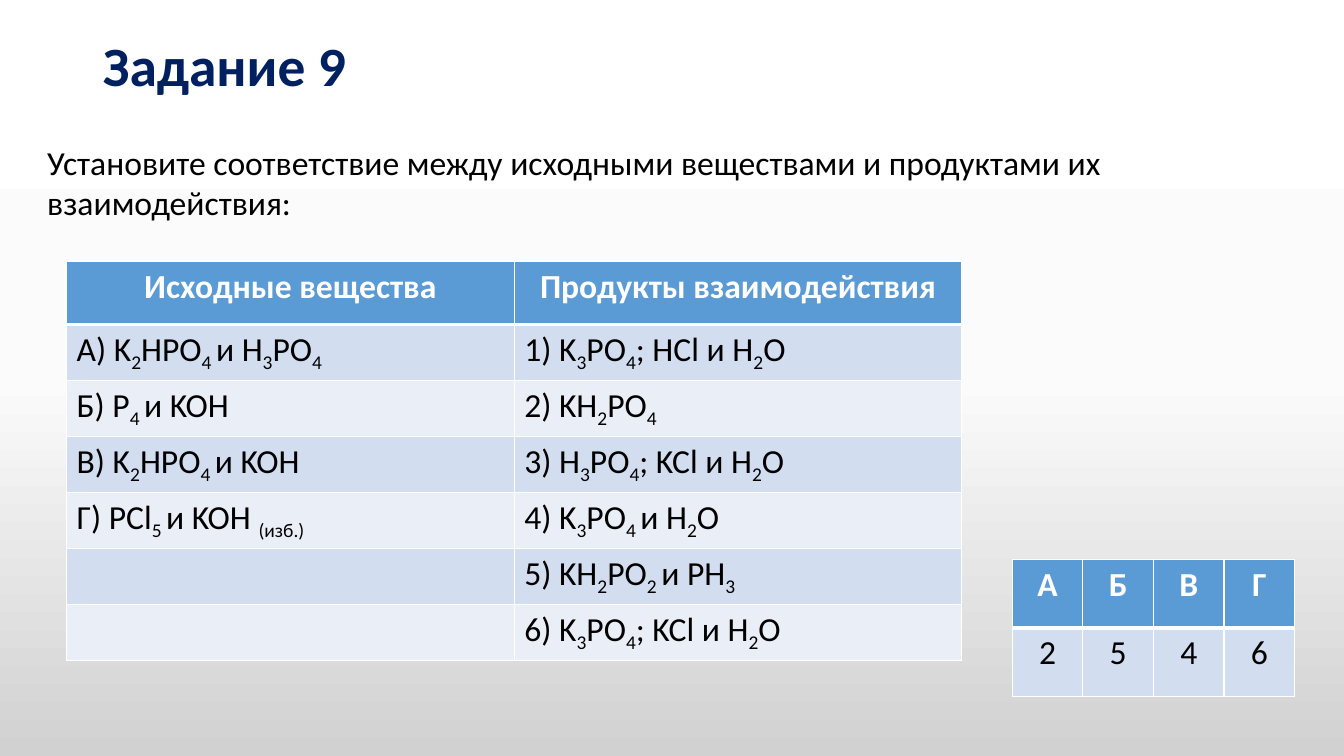
"""Builds a chemistry task slide with a matching table and an answer key."""
from copy import deepcopy

from lxml.etree import SubElement
from pptx import Presentation
from pptx.dml.color import RGBColor
from pptx.enum.text import MSO_ANCHOR, PP_ALIGN
from pptx.oxml import parse_xml
from pptx.oxml.ns import nsdecls, qn
from pptx.util import Inches, Pt

HEADER, BANDS = "5B9BD5", ("EAEFF7", "D2DEEF")


def style(font, size, color, bold=False):
    font.name, font.size, font.bold = "Calibri", Pt(size), bold
    font.color.rgb = RGBColor.from_string(color)


def add_grid(s, rows, left, top, col_width, heights, centered=False):
    cols = len(rows[0])
    table = s.shapes.add_table(len(rows), cols, Inches(left), Inches(top),
                               Inches(col_width * cols), Inches(sum(heights))).table
    for col in table.columns:
        col.width = Inches(col_width)
    for i, (texts, height) in enumerate(zip(rows, heights)):
        table.rows[i].height = Inches(height)
        for j, text in enumerate(texts):
            cell = table.cell(i, j)
            cell.fill.solid()
            cell.fill.fore_color.rgb = RGBColor.from_string(BANDS[i % 2] if i else HEADER)
            p = cell.text_frame.paragraphs[0]
            p.alignment = PP_ALIGN.CENTER if centered or i == 0 else PP_ALIGN.LEFT
            style(p.font, 24, "000000" if i else "FFFFFF", i == 0)
            for k, part in enumerate(text.split("|") if text else []):
                r = p.add_run()
                r.text = part
                if k % 2:
                    r._r.get_or_add_rPr().set("baseline", "-25000")
            widths = {"L": 1, "R": 1, "T": 3 if i == 1 else 1, "B": 1 if i else 3}
            for n, (side, width) in enumerate(widths.items()):
                ln = parse_xml(f'<a:ln{side} {nsdecls("a")} w="{Pt(width)}"/>')
                fill = SubElement(ln, qn("a:solidFill"))
                SubElement(fill, qn("a:srgbClr"), val="FFFFFF")
                cell._tc.get_or_add_tcPr().insert(n, ln)


prs = Presentation()
prs.slide_width, prs.slide_height = Inches(13.33), Inches(7.5)
s = prs.slides.add_slide(prs.slide_layouts[5])

bg = s.background.fill
bg.gradient()
bg.gradient_angle = 270
first = bg.gradient_stops[0]._gs
first.addnext(deepcopy(first))
for stop, position, color in zip(bg.gradient_stops, (0, 0.5, 1), ("FFFFFF", "FBFBFB", "D1D1D1")):
    stop.position = position
    stop.color.rgb = RGBColor.from_string(color)

title = s.shapes.title
title.left, title.top, title.width, title.height = map(Inches, (0.92, 0.4, 11.5, 0.56))
tf = title.text_frame
tf.text = "Задание 9"
tf.vertical_anchor = MSO_ANCHOR.MIDDLE
p = tf.paragraphs[0]
p.alignment, p.line_spacing = PP_ALIGN.LEFT, 0.9
style(p.font, 39.6, "002060", True)

tf = s.shapes.add_textbox(*map(Inches, (0.37, 1.36, 12.48, 0.91))).text_frame
tf.word_wrap = True
p = tf.paragraphs[0]
p.text = "Установите соответствие между исходными веществами и продуктами их взаимодействия:"
style(p.font, 24, "000000")

substances = [
    ("Исходные вещества", "Продукты взаимодействия"),
    ("А) K|2|HPO|4 |и H|3|PO|4", "1) K|3|PO|4|; HCl и H|2|O"),
    ("Б) P|4 |и KOH", "2) KH|2|PO|4"),
    ("В) K|2|HPO|4 |и KOH", "3) H|3|PO|4|; KCl и H|2|O"),
    ("Г) PCl|5 |и KOH |(изб.)", "4) K|3|PO|4 |и H|2|O"),
    ("", "5) KH|2|PO|2 |и PH|3"),
    ("", "6) K|3|PO|4|; KCl и H|2|O"),
]
add_grid(s, substances, 0.66, 2.59, 4.44, [0.63] + [0.555] * 6)
add_grid(s, ["АБВГ", "2546"], 10.04, 5.55, 0.7, [0.68] * 2, centered=True)

prs.save("out.pptx")
